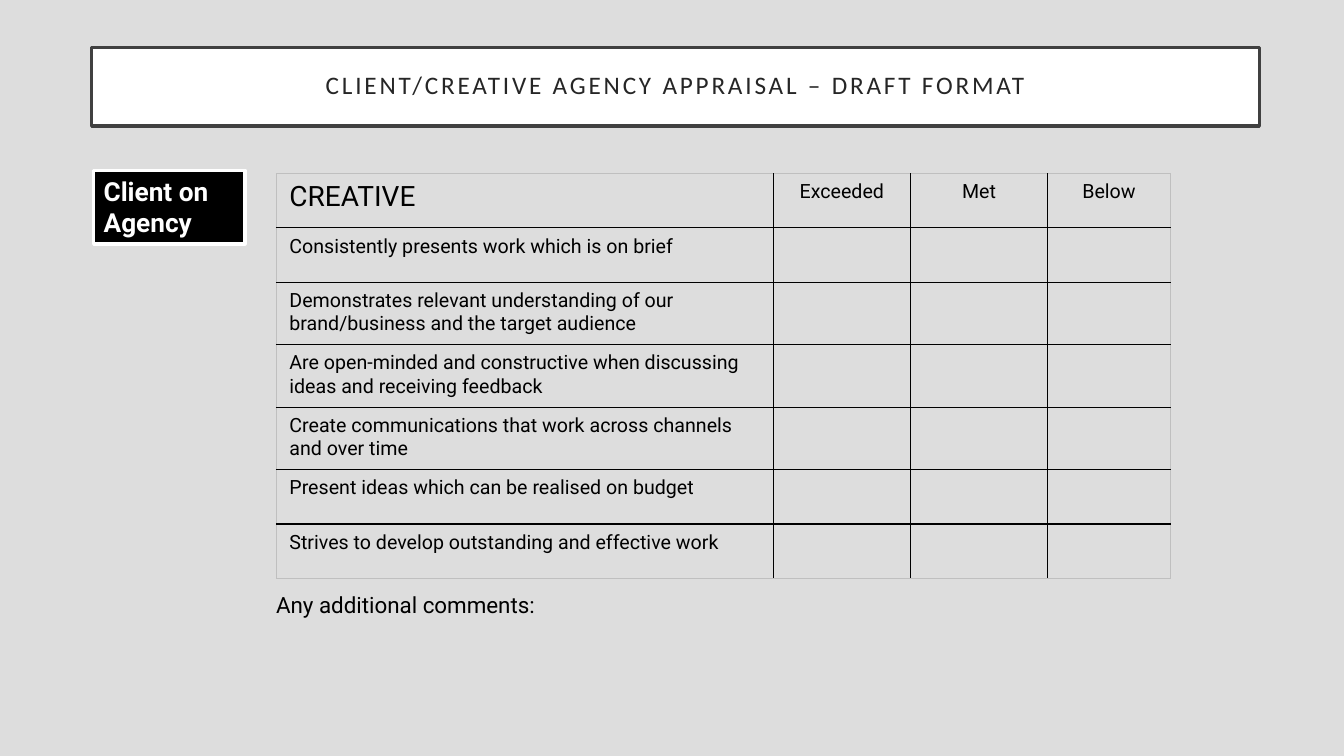
from lxml import etree
from pptx import Presentation
from pptx import util as u
from pptx.dml.color import RGBColor
from pptx.enum import shapes, text
from pptx.oxml.ns import qn


def rgb(value):
    """Turn a hex string into a colour."""
    return RGBColor.from_string(value)


class AppraisalSlide:
    """Draws the elements of one appraisal slide in a shared style."""

    FONT = "Roboto"
    INK = "000000"
    PAPER = "FFFFFF"
    GRID = "000000"
    EDGE = "BFBFBF"

    def __init__(self, prs, background):
        """Add a blank slide with a plain background."""
        self.s = prs.slides.add_slide(prs.slide_layouts[6])
        self.s.background.fill.solid()
        self.s.background.fill.fore_color.rgb = rgb(background)

    def label(self, tf, words, size, color=INK, font=FONT, bold=False,
              align=text.PP_ALIGN.LEFT):
        """Put one styled paragraph in a text frame and return it."""
        tf.word_wrap = True
        p = tf.paragraphs[0]
        p.text = words
        p.alignment = align
        p.font.name = font
        p.font.size = u.Pt(size)
        p.font.bold = bold
        p.font.color.rgb = rgb(color)
        return p

    def box(self, left, top, width, height, fill, line):
        """Add a framed rectangle and return its text frame."""
        sp = self.s.shapes.add_shape(
            shapes.MSO_SHAPE.RECTANGLE, *map(u.Inches, (left, top, width, height)))
        sp.shadow.inherit = False
        sp.fill.solid()
        sp.fill.fore_color.rgb = rgb(fill)
        sp.line.color.rgb = rgb(line)
        sp.line.width = u.Pt(2.5)
        return sp.text_frame

    def title(self, words):
        """Add the letterspaced title bar."""
        tf = self.box(0.91, 0.47, 11.58, 0.78, self.PAPER, "404040")
        tf.vertical_anchor = text.MSO_ANCHOR.MIDDLE
        tf.margin_left = tf.margin_right = u.Inches(0.2)
        tf.margin_top = tf.margin_bottom = u.Inches(0.2)
        p = self.label(tf, words, 18, "262626", "Calibri", align=text.PP_ALIGN.CENTER)
        p.line_spacing = 0.9
        p._p.get_or_add_pPr().get_or_add_defRPr().set("spc", "200")

    def tag(self, words):
        """Add the black label beside the table."""
        tf = self.box(0.93, 1.69, 1.5, 0.73, self.INK, self.PAPER)
        tf.vertical_anchor = text.MSO_ANCHOR.TOP
        self.label(tf, words, 18.7, self.PAPER, bold=True)

    def note(self, words, left, top, width, height):
        """Add a plain line of text."""
        sp = self.s.shapes.add_textbox(*map(u.Inches, (left, top, width, height)))
        self.label(sp.text_frame, words, 16)

    def border(self, cell, side, color, width):
        """Add one border line to a cell."""
        ln = etree.SubElement(cell._tc.get_or_add_tcPr(), qn(f"a:ln{side}"),
                              w=str(u.Pt(width)))
        fill = etree.SubElement(ln, qn("a:solidFill"))
        etree.SubElement(fill, qn("a:srgbClr"), val=color)

    def table(self, left, top, widths, heights, headings, criteria):
        """Add the rating grid with a heading row and one row per criterion."""
        frame = self.s.shapes.add_table(
            len(heights), len(widths),
            *map(u.Inches, (left, top, sum(widths), sum(heights))))
        grid = frame.table
        grid.first_row = grid.horz_banding = False
        for column, width in zip(grid.columns, widths):
            column.width = u.Inches(width)
        for row, height in zip(grid.rows, heights):
            row.height = u.Inches(height)
        rows = [headings] + [[words] + [""] * (len(widths) - 1) for words in criteria]
        for i, row in enumerate(rows):
            for j, words in enumerate(row):
                cell = grid.cell(i, j)
                cell.margin_left = cell.margin_right = u.Inches(0.13)
                cell.margin_top = cell.margin_bottom = u.Inches(0.07)
                outer = {"L": j == 0, "R": j == len(widths) - 1,
                         "T": i == 0, "B": i == len(rows) - 1}
                for side, edge in outer.items():
                    self.border(cell, side, self.EDGE if edge else self.GRID,
                                0.5 if edge else 1)
                cell.fill.background()
                self.label(cell.text_frame, words, 20 if i == j == 0 else 14,
                           align=text.PP_ALIGN.CENTER if j else text.PP_ALIGN.LEFT)


def main():
    """Build and save the appraisal slide."""
    prs = Presentation()
    prs.slide_width, prs.slide_height = u.Inches(13.33), u.Inches(7.5)
    slide = AppraisalSlide(prs, "DDDDDD")
    slide.title("CLIENT/CREATIVE AGENCY APPRAISAL – DRAFT FORMAT")
    slide.table(
        2.74, 1.72, [4.93, 1.36, 1.36, 1.22],
        [0.54, 0.54, 0.62, 0.62, 0.62, 0.54, 0.54],
        ["CREATIVE", "Exceeded", "Met", "Below"],
        ["Consistently presents work which is on brief",
         "Demonstrates relevant understanding of our brand/business and the target audience",
         "Are open-minded and constructive when discussing ideas and receiving feedback",
         "Create communications that work across channels and over time",
         "Present ideas which can be realised on budget",
         "Strives to develop outstanding and effective work"])
    slide.note("Any additional comments:", 2.64, 5.82, 3.67, 0.37)
    slide.tag("Client on Agency")
    prs.save("out.pptx")


if __name__ == "__main__":
    main()
